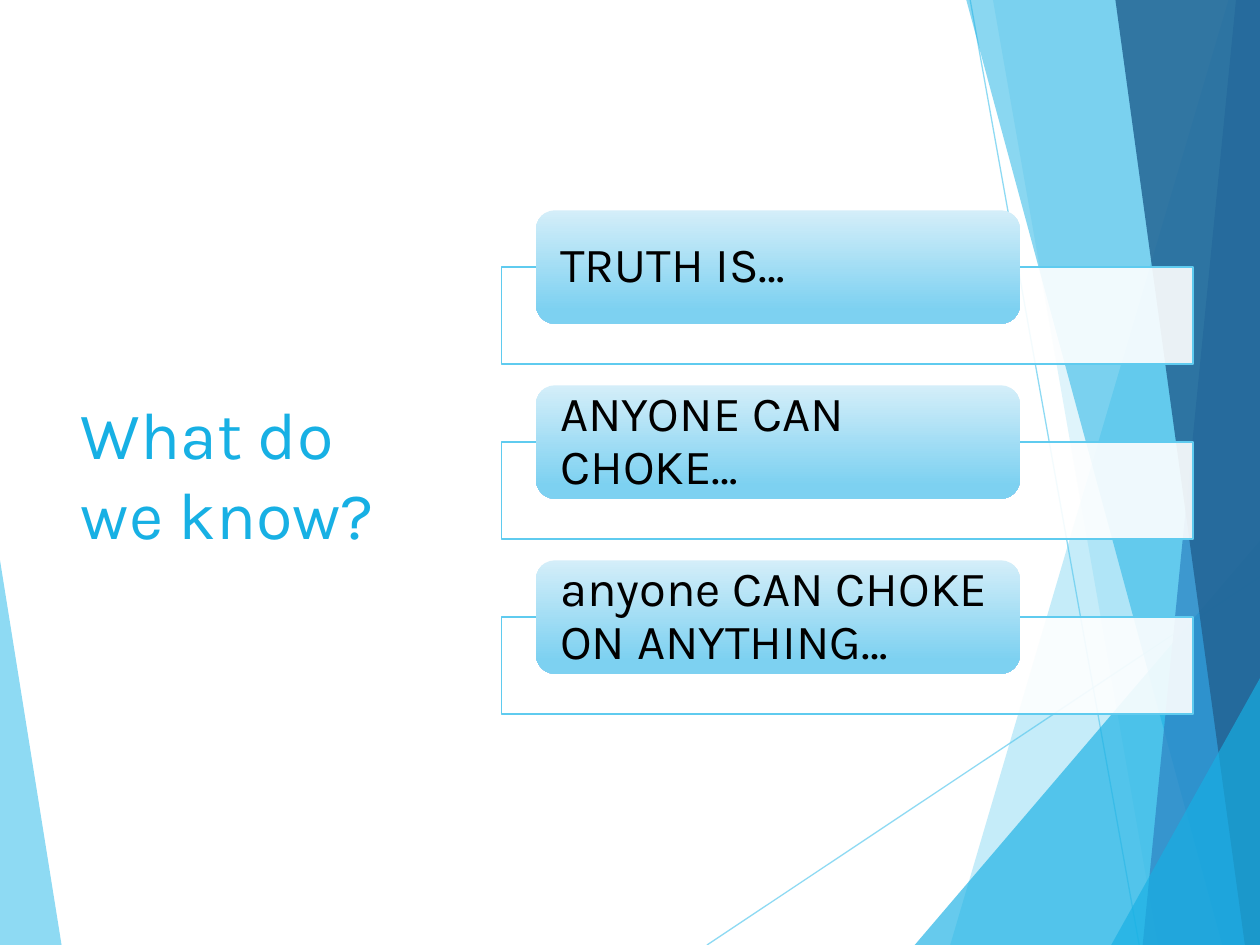
from pptx import Presentation
from pptx.util import Pt
from pptx.dml.color import RGBColor
from pptx.enum.shapes import MSO_SHAPE as Shape, MSO_CONNECTOR as Link
from pptx.enum.text import MSO_ANCHOR as Anchor, PP_ALIGN as Align
from pptx.oxml.ns import qn
from lxml.etree import SubElement

SKY = RGBColor(0x5F, 0xCB, 0xEF)
CYAN = RGBColor(0x17, 0xB0, 0xE4)
BLUE = RGBColor(0x2E, 0x83, 0xC3)
NAVY = RGBColor(0x22, 0x62, 0x92)
PALE = RGBColor(0xD4, 0xEE, 0xF9)
SOFT = RGBColor(0x7D, 0xD1, 0xF1)
WHITE = RGBColor(0xFF, 0xFF, 0xFF)
BLACK = RGBColor(0, 0, 0)


def write(shape, text, size, color, inset=(7.2, 3.6), space=1.0):
    frame = shape.text_frame
    frame.word_wrap = True
    frame.vertical_anchor = Anchor.MIDDLE
    frame.margin_left = frame.margin_right = Pt(inset[0])
    frame.margin_top = frame.margin_bottom = Pt(inset[1])
    para = frame.paragraphs[0]
    para.alignment = Align.LEFT
    para.line_spacing = space
    run = para.add_run()
    run.text = text
    run.font.name = "Karla"
    run.font.size = Pt(size)
    run.font.color.rgb = color


def paint(fill, color, alpha):
    fill.solid()
    fill.fore_color.rgb = color
    tint = fill._xPr.find(".//" + qn("a:srgbClr"))
    SubElement(tint, qn("a:alpha"), val=str(alpha * 1000))


deck = Presentation()
deck.slide_width, deck.slide_height = Pt(720), Pt(540)
slide = deck.slides.add_slide(deck.slide_layouts[5])
shapes = slide.shapes

# Thin lines behind the facets
for x1, y1, x2, y2 in [(404, 540, 720, 329.5), (554.4, 0, 651, 540)]:
    line = shapes.add_connector(Link.STRAIGHT, Pt(x1), Pt(y1), Pt(x2), Pt(y2))
    line.line.width = Pt(0.75)
    paint(line.line.fill, SKY, 70)
    SubElement(line._element.spPr, qn("a:effectLst"))

# Translucent facets: colour, opacity, corners
facets = [
    (SKY, 70, [(0, 320), (35.2, 540), (0, 540)]),
    (SKY, 36, [(702, 0), (543, 540), (720, 540), (720, 0)]),
    (SKY, 20, [(567.4, 0), (661.7, 540), (720, 540), (720, 0)]),
    (CYAN, 66, [(522.7, 540), (720, 309), (720, 540)]),
    (CYAN, 50, [(552.2, 0), (698.4, 540), (720, 540), (720, 0)]),
    (BLUE, 70, [(706.3, 0), (653, 540), (720, 540), (720, 0)]),
    (NAVY, 82, [(637.4, 0), (711.4, 540), (720, 540), (720, 0)]),
    (CYAN, 66, [(635, 540), (720, 387.5), (720, 540)]),
]
for color, alpha, dots in facets:
    dots = [(Pt(x), Pt(y)) for x, y in dots]
    path = shapes.build_freeform(*dots[0])
    path.add_line_segments(dots[1:], close=True)
    facet = path.convert_to_shape()
    facet.shadow.inherit = False
    facet.line.fill.background()
    paint(facet.fill, color, alpha)

# Title
title = shapes.title
title.left, title.top, title.width, title.height = Pt(39), Pt(108.7), Pt(209.5), Pt(322.6)
write(title, "What do we know?", 38, CYAN)

# Three statements, each a pill over a box
notes = ["TRUTH IS…", "ANYONE CAN CHOKE…", "anyone CAN CHOKE ON ANYTHING…"]
for row, note in enumerate(notes):
    top = 120.2 + 100 * row
    box = shapes.add_shape(Shape.RECTANGLE, Pt(286.5), Pt(top + 32.4), Pt(395.3), Pt(55.6))
    box.shadow.inherit = False
    paint(box.fill, WHITE, 90)
    box.line.color.rgb = SKY
    box.line.width = Pt(1)

    pill = shapes.add_shape(Shape.ROUNDED_RECTANGLE, Pt(306.3), Pt(top), Pt(276.5), Pt(64.8))
    pill.shadow.inherit = False
    pill.line.fill.background()
    pill.fill.gradient()
    pill.fill.gradient_angle = 270
    for stop, color, spot in zip(pill.fill.gradient_stops, (PALE, SOFT), (0, 0.88)):
        stop.color.rgb = color
        stop.position = spot
    write(pill, note, 28, BLACK, inset=(10.8, 0), space=0.9)

deck.save("out.pptx")
